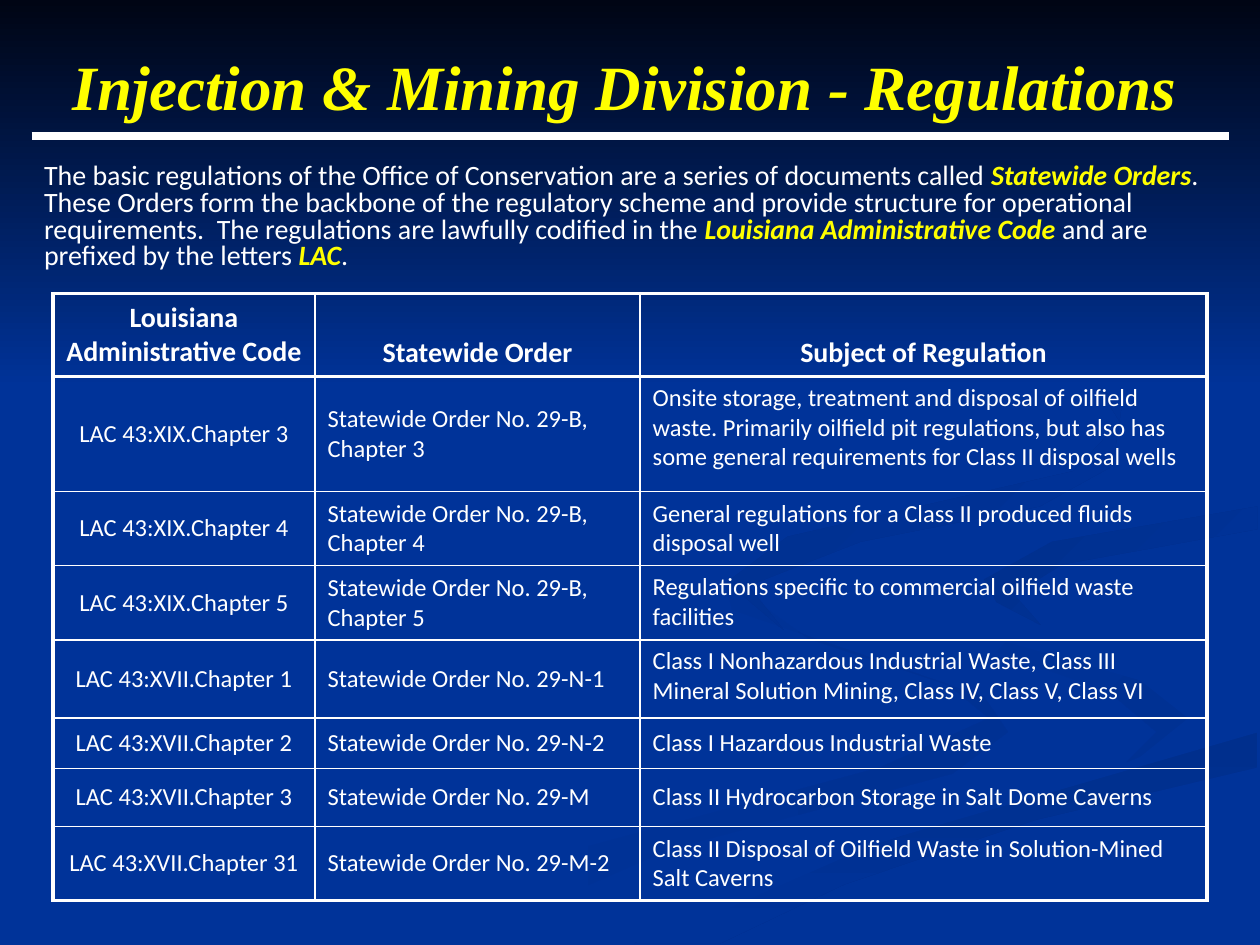
import pptx
import pptx.dml.color
import pptx.enum.shapes
import pptx.enum.text
import pptx.oxml
import pptx.oxml.ns
import pptx.util

Inches, Pt = pptx.util.Inches, pptx.util.Pt
RGB = pptx.dml.color.RGBColor
ALIGN = pptx.enum.text.PP_ALIGN
ANCHOR = pptx.enum.text.MSO_ANCHOR

WHITE = RGB(0xFF, 0xFF, 0xFF)
YELLOW = RGB(0xFF, 0xFF, 0x00)
BLUE = RGB(0x00, 0x33, 0x99)
NIGHT = RGB(0x00, 0x05, 0x14)
DUSK = RGB(0x00, 0x2F, 0x8D)
SHADE = RGB(0x00, 0x31, 0x93)

TITLE = {"name": "Times New Roman", "size": Pt(36), "bold": True, "italic": True}
PLAIN = {"name": "Calibri", "size": Pt(16), "bold": False, "italic": False}
TERM = {**PLAIN, "bold": True, "italic": True}
HEAD = {**PLAIN, "bold": True}
CELL = {**PLAIN, "size": Pt(14)}


def write(para, text, look, color):
    """Add one formatted run to a paragraph."""
    run = para.add_run()
    run.text = text
    for key, value in look.items():
        setattr(run.font, key, value)
    run.font.color.rgb = color


def edge(cell, side, width):
    """Draw one white border of a cell; side is L, R, T or B."""
    props = cell._tc.get_or_add_tcPr()
    props.append(pptx.oxml.parse_xml(
        f'<a:ln{side} {pptx.oxml.ns.nsdecls("a")} w="{Pt(width)}"><a:solidFill>'
        f'<a:srgbClr val="{WHITE}"/></a:solidFill></a:ln{side}>'))


deck = pptx.Presentation()
deck.slide_width, deck.slide_height = Inches(10), Inches(7.5)
slide = deck.slides.add_slide(deck.slide_layouts[1])
shapes = slide.shapes
title, body = shapes.title, slide.placeholders[1]
slide.background.fill.solid()
slide.background.fill.fore_color.rgb = BLUE

# Backdrop: first colour, last colour, gradient angle, outline
swirls = [
    (BLUE, SHADE, 0, [
        (7.81, 5.53), (6.42, 5.07), (5.75, 4.59), (5.81, 4.84), (7.52, 5.43),
        (7.85, 5.7), (6.99, 6.09), (4.58, 6.74), (3, 7.49), (3.61, 7.49),
        (5.32, 6.74), (7.56, 6.14), (8, 5.81)]),
    (BLUE, SHADE, 315, [
        (9.43, 5.7), (9.05, 5.4), (7.58, 4.98), (7.24, 4.64), (7.55, 5.05),
        (8.8, 5.49), (9.18, 5.81), (8.94, 6.05), (9.32, 5.89)]),
    (DUSK, BLUE, 270, [
        (5.03, 7.49), (5.71, 7.49), (6.7, 7.02), (8.21, 6.51), (9.98, 6.09),
        (9.98, 5.81), (7.64, 6.47), (6.3, 6.93)]),
    (BLUE, BLUE, 0, [
        (7.25, 4.64), (7.59, 4.98), (9.05, 5.4), (9.43, 5.7), (9.02, 6.03),
        (6.63, 6.68), (4.77, 7.49), (5.19, 7.47), (6.96, 6.69), (9.99, 5.81),
        (9.99, 5.38), (8.32, 4.98), (7.82, 4.6), (8.35, 4.3), (9.99, 4.02),
        (9.99, 3.87), (7.7, 4.27)]),
    (DUSK, BLUE, 315, [
        (7.81, 4.6), (7.91, 4.78), (8.26, 4.96), (8.05, 4.72), (8.43, 4.48),
        (9.98, 4.2), (9.98, 4.02), (8.35, 4.3)]),
    (DUSK, BLUE, 315, [
        (6.83, 4.3), (8.25, 4.02), (8.83, 3.7), (8.9, 3.24), (8.43, 2.75),
        (7.62, 2.33), (8.62, 2.92), (8.89, 3.35), (8.52, 3.74), (6.25, 4.26),
        (5.77, 4.62), (6.22, 5), (5.94, 4.65)]),
    (NIGHT, BLUE, 270, [(0, 0), (0, 3.08), (10, 3.08), (10, 0)]),
]
for first, last, angle, points in swirls:
    spots = [(Inches(x), Inches(y)) for x, y in points]
    pen = shapes.build_freeform(*spots[0])
    pen.add_line_segments(spots[1:], close=True)
    swirl = pen.convert_to_shape()
    swirl.shadow.inherit = False
    swirl.line.fill.background()
    if first == last:
        swirl.fill.solid()
        swirl.fill.fore_color.rgb = first
    else:
        swirl.fill.gradient()
        swirl.fill.gradient_angle = angle
        for stop, color in zip(swirl.fill.gradient_stops, (first, last)):
            stop.color.rgb = color

# Table of regulations
order = "Statewide Order No. 29-"
rows = [
    (0.66, "Louisiana Administrative Code", "Statewide Order", "Subject of Regulation"),
    (0.91, "LAC 43:XIX.Chapter 3", order + "B, Chapter 3",
     "Onsite storage, treatment and disposal of oilfield waste. Primarily oilfield pit "
     "regulations, but also has some general requirements for Class II disposal wells"),
    (0.59, "LAC 43:XIX.Chapter 4", order + "B, Chapter 4",
     "General regulations for a Class II produced fluids disposal well"),
    (0.59, "LAC 43:XIX.Chapter 5", order + "B, Chapter 5",
     "Regulations specific to commercial oilfield waste facilities"),
    (0.62, "LAC 43:XVII.Chapter 1", order + "N-1",
     "Class I Nonhazardous Industrial Waste, Class III Mineral Solution Mining, "
     "Class IV, Class V, Class VI"),
    (0.4, "LAC 43:XVII.Chapter 2", order + "N-2", "Class I Hazardous Industrial Waste"),
    (0.46, "LAC 43:XVII.Chapter 3", order + "M",
     "Class II Hydrocarbon Storage in Salt Dome Caverns"),
    (0.59, "LAC 43:XVII.Chapter 31", order + "M-2",
     "Class II Disposal of Oilfield Waste in Solution-Mined Salt Caverns"),
]
widths = [2.08, 2.58, 4.5]
end = len(rows) - 1
table = shapes.add_table(len(rows), 3, Inches(0.42), Inches(2.33),
                         Inches(sum(widths)), Inches(4.82)).table
table.first_row = table.horz_banding = False
for col, width in zip(table.columns, widths):
    col.width = Inches(width)
for r, (height, *texts) in enumerate(rows):
    table.rows[r].height = Inches(height)
    for c, text in enumerate(texts):
        cell = table.cell(r, c)
        thick = {"L": c == 0, "R": c == 2, "T": r < 2, "B": r in (0, end)}
        for side, bold in thick.items():
            edge(cell, side, 2.25 if bold else 1)
        cell.fill.background()
        cell.vertical_anchor = ANCHOR.MIDDLE
        if r == 0 and c > 0:
            cell.vertical_anchor = ANCHOR.BOTTOM
        elif c == 2 and r in (1, 3, 4):
            cell.vertical_anchor = ANCHOR.TOP
        para = cell.text_frame.paragraphs[0]
        para.alignment = ALIGN.CENTER if r == 0 or c == 0 else ALIGN.LEFT
        write(para, text, CELL if r else HEAD, WHITE)

rule = shapes.add_connector(pptx.enum.shapes.MSO_CONNECTOR.STRAIGHT,
                            Inches(0.25), Inches(1.08), Inches(9.75), Inches(1.08))
rule.line.color.rgb = WHITE
rule.line.width = Pt(4.5)
rule.element.spPr.append(pptx.oxml.parse_xml(
    f'<a:effectLst {pptx.oxml.ns.nsdecls("a")}/>'))

# Title and introduction, brought in front of the backdrop
for holder, box in ((title, (0.17, 0.33, 9.58, 0.71)), (body, (0.25, 1.25, 9.42, 0.96))):
    shapes.element.append(holder.element)
    holder.left, holder.top, holder.width, holder.height = map(Inches, box)
    frame = holder.text_frame
    frame.word_wrap = True
    frame.auto_size = pptx.enum.text.MSO_AUTO_SIZE.NONE
    frame.vertical_anchor = ANCHOR.TOP

head = title.text_frame.paragraphs[0]
head.alignment = ALIGN.CENTER
write(head, "Injection & Mining Division - Regulations", TITLE, YELLOW)

intro = body.text_frame.paragraphs[0]
intro.line_spacing = 0.8
intro.space_before = Pt(0)
props = intro._p.get_or_add_pPr()
props.set("marL", "0")
props.set("indent", "0")
props.append(pptx.oxml.parse_xml(f'<a:buNone {pptx.oxml.ns.nsdecls("a")}/>'))
parts = [
    "The basic regulations of the Office of Conservation are a series of documents called ",
    "Statewide Orders",
    ".  These Orders form the backbone of the regulatory scheme and provide structure for "
    "operational requirements.  The regulations are lawfully codified in the ",
    "Louisiana Administrative Code",
    " and are prefixed by the letters ",
    "LAC",
    ".",
]
for i, part in enumerate(parts):
    write(intro, part, *((TERM, YELLOW) if i % 2 else (PLAIN, WHITE)))

deck.save("out.pptx")
